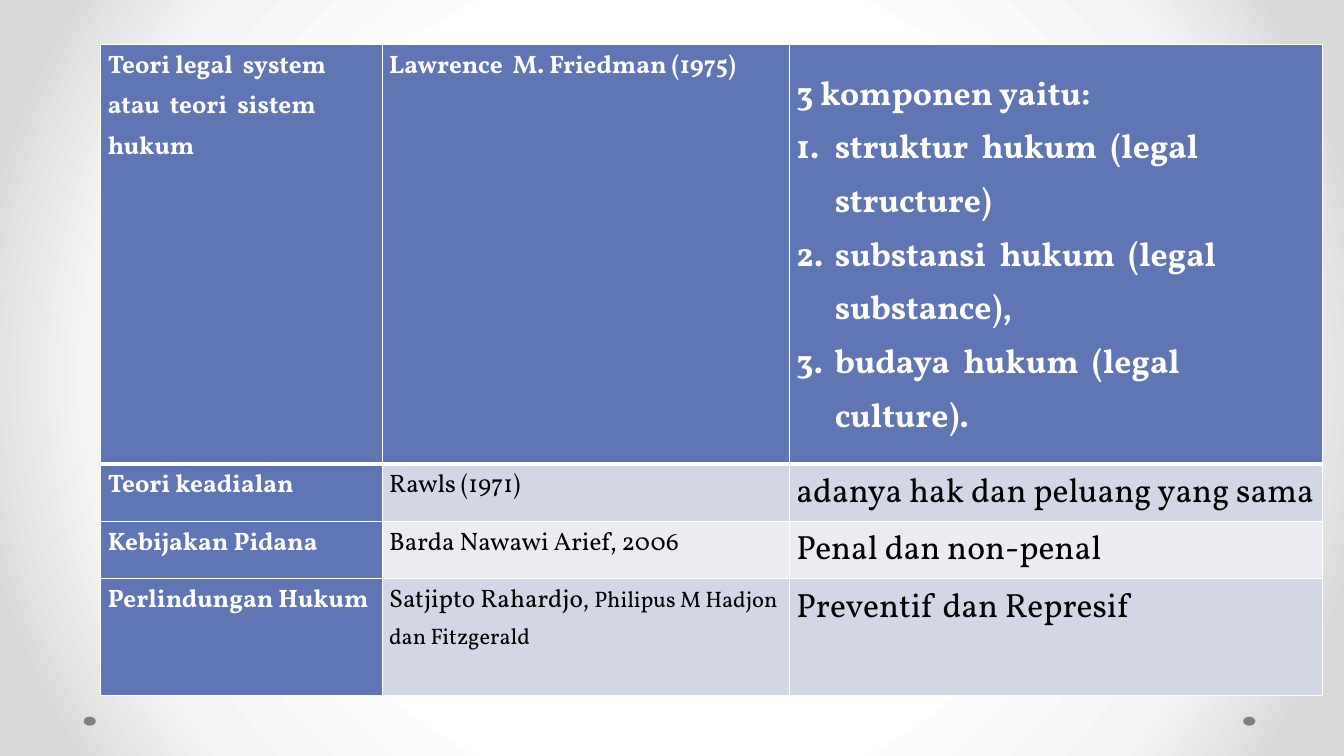
from dataclasses import dataclass

from pptx import Presentation
from pptx import util as u
from pptx.dml.color import RGBColor
from pptx.enum import shapes, text
from pptx.oxml import parse_xml
from pptx.oxml.ns import nsdecls, qn

PX = 9144  # EMU in one px, at 100 px to the inch
COLORS = {
    "white": "FFFFFF", "black": "000000", "blue": "6076B4",
    "band": "D2D6E5", "light band": "EAECF2", "dot": "808080",
}
BACKGROUND_STOPS = {50: "FFFFFF", 76: "F4F4F4", 92: "DADADA"}
FONT = "Vollkorn"
COLUMNS = (279, 404, 529)
MARGINS = {"margin_left": 7 * PX, "margin_right": 7 * PX, "margin_top": 0, "margin_bottom": 0}
LIST_INDENT = 38
LEFT, JUSTIFY = text.PP_ALIGN.LEFT, text.PP_ALIGN.JUSTIFY


@dataclass
class Run:
    words: str
    size: int = 18


@dataclass
class Line:
    runs: list[Run]
    numbered: bool = False


@dataclass
class TheoryRow:
    height: int
    fill: str
    theory: str
    authors: list[Run]
    content: list[Line]


ROWS = [
    TheoryRow(416, "blue", "Teori legal  system atau  teori  sistem  hukum",
              [Run("Lawrence  M. Friedman (1975)")],
              [Line([Run("3 komponen yaitu:", 24)]),
               Line([Run("struktur  hukum  (legal  structure)", 24)], True),
               Line([Run("substansi  hukum  (legal  substance),", 24)], True),
               Line([Run("budaya  hukum  (legal  culture).", 24)], True)]),
    TheoryRow(57, "band", "Teori keadialan", [Run("Rawls (1971)")],
              [Line([Run("adanya hak dan peluang yang sama", 24)])]),
    TheoryRow(57, "light band", "Kebijakan Pidana", [Run("Barda Nawawi Arief, 2006")],
              [Line([Run("Penal dan non-penal", 24)])]),
    TheoryRow(116, "band", "Perlindungan Hukum",
              [Run("Satjipto Rahardjo, "), Run("Philipus M Hadjon dan Fitzgerald", 16)],
              [Line([Run("Preventif dan Represif", 24)])]),
]


def rgb(name: str) -> RGBColor:
    return RGBColor.from_string(COLORS[name])


def set_all(target, values: dict) -> None:
    for name, value in values.items():
        setattr(target, name, value)


def paint_background(slide) -> None:
    """Fill the slide with a gradient that spreads from its centre."""
    slide.background.fill.gradient()
    gradient = next(slide.element.iter(qn("a:gradFill")))
    stops = "".join(f'<a:gs pos="{position * 1000}"><a:srgbClr val="{color}"/></a:gs>'
                    for position, color in BACKGROUND_STOPS.items())
    gradient.getparent().replace(gradient, parse_xml(
        f'<a:gradFill {nsdecls("a")} rotWithShape="1"><a:gsLst>{stops}</a:gsLst>'
        '<a:path path="circle"><a:fillToRect l="50000" t="50000" r="50000" b="50000"/>'
        '</a:path></a:gradFill>'))


def add_dot(slide, left: int) -> None:
    dot = slide.shapes.add_shape(shapes.MSO_SHAPE.OVAL, left * PX, 711 * PX, 12 * PX, 9 * PX)
    dot.shadow.inherit = False
    dot.fill.solid()
    dot.fill.fore_color.rgb = rgb("dot")
    dot.line.fill.background()


def add_borders(cell, top: int, bottom: int) -> None:
    properties = cell._tc.get_or_add_tcPr()
    for side, points in {"L": 1, "R": 1, "T": top, "B": bottom}.items():
        properties.append(parse_xml(
            f'<a:ln{side} {nsdecls("a")} w="{u.Pt(points)}"><a:solidFill>'
            f'<a:srgbClr val="{COLORS["white"]}"/></a:solidFill></a:ln{side}>'))


def number_paragraph(paragraph) -> None:
    properties = paragraph._p.get_or_add_pPr()
    properties.set("marL", str(LIST_INDENT * PX))
    properties.set("indent", str(-LIST_INDENT * PX))
    properties.append(parse_xml(f'<a:buAutoNum {nsdecls("a")} type="arabicPeriod"/>'))


def write_lines(cell, lines: list[Line], alignment, bold: bool) -> None:
    frame = cell.text_frame
    for index, line in enumerate(lines):
        paragraph = frame.add_paragraph() if index else frame.paragraphs[0]
        set_all(paragraph, {"alignment": alignment, "line_spacing": 1.15})
        if line.numbered:
            number_paragraph(paragraph)
        for item in line.runs:
            run = paragraph.add_run()
            run.text = item.words
            set_all(run.font, {"name": FONT, "size": u.Pt(item.size), "bold": bold})
            run.font.color.rgb = rgb("white" if bold else "black")


def add_theory_table(slide) -> None:
    height = sum(row.height for row in ROWS)
    table = slide.shapes.add_table(len(ROWS), len(COLUMNS), 100 * PX, 44 * PX,
                                   sum(COLUMNS) * PX, height * PX).table
    for column, width in zip(table.columns, COLUMNS):
        column.width = width * PX
    for row_index, row in enumerate(ROWS):
        table.rows[row_index].height = row.height * PX
        is_header = row_index == 0
        contents = ([Line([Run(row.theory)])], [Line(row.authors)], row.content)
        for column_index, lines in enumerate(contents):
            cell = table.cell(row_index, column_index)
            set_all(cell, MARGINS)
            add_borders(cell, 3 if row_index == 1 else 1, 3 if is_header else 1)
            cell.fill.solid()
            cell.fill.fore_color.rgb = rgb("blue" if column_index == 0 else row.fill)
            alignment = LEFT if is_header or column_index == 1 else JUSTIFY
            write_lines(cell, lines, alignment, is_header or column_index == 0)
    table.cell(0, 2).vertical_anchor = text.MSO_ANCHOR.MIDDLE


def main() -> None:
    presentation = Presentation()
    set_all(presentation, {"slide_width": 1333 * PX, "slide_height": 750 * PX})
    slide = presentation.slides.add_slide(presentation.slide_layouts[6])
    paint_background(slide)
    for left in (1233, 83):
        add_dot(slide, left)
    add_theory_table(slide)
    presentation.save("out.pptx")


if __name__ == "__main__":
    main()
